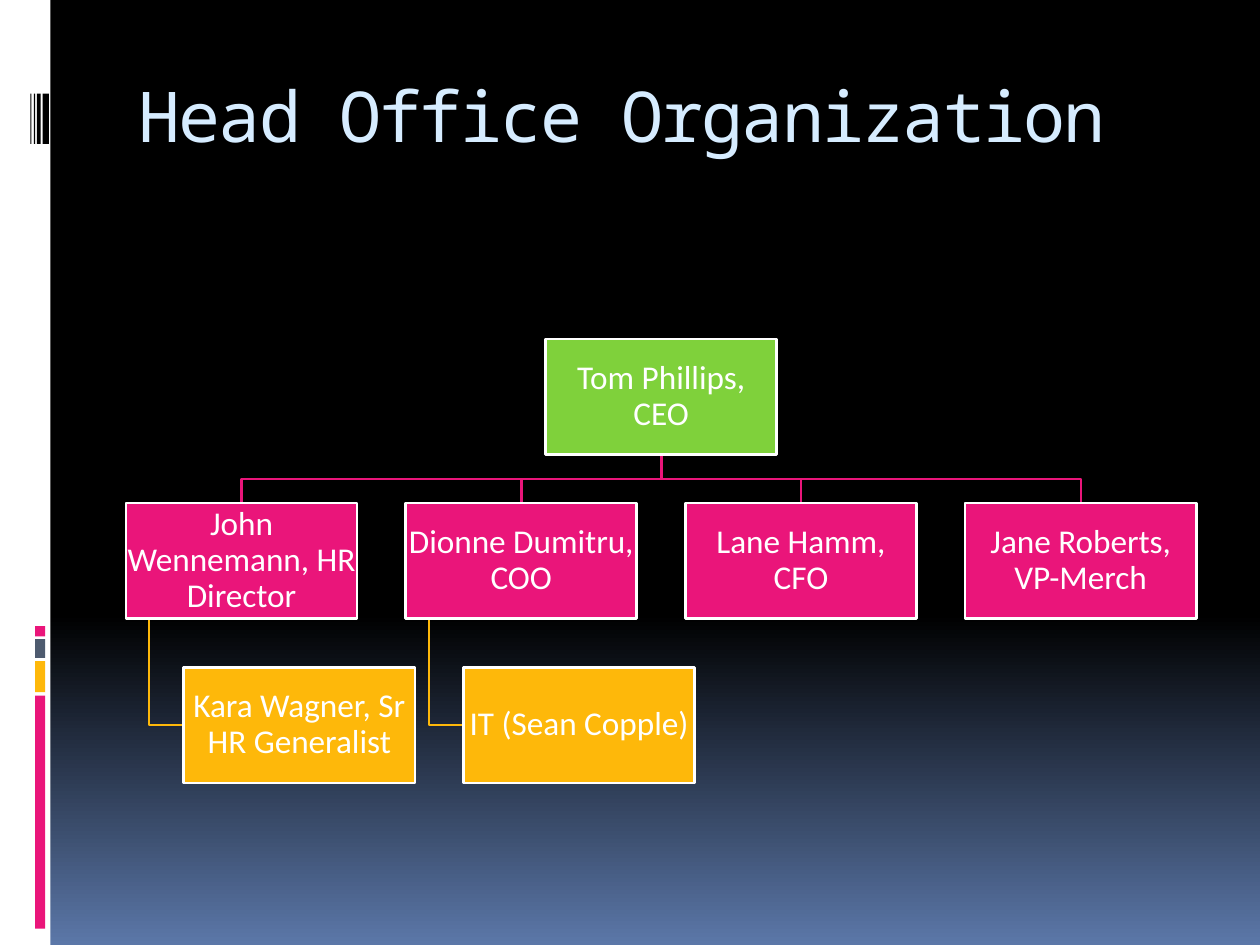
"""Build the Head Office Organization slide with its three-level chart."""
from dataclasses import dataclass
from typing import Any

from pptx import Presentation
from pptx.dml.color import RGBColor
from pptx.enum.shapes import MSO_SHAPE
from pptx.enum.text import MSO_ANCHOR, PP_ALIGN
from pptx.util import Pt


@dataclass(frozen=True)
class Theme:
    white: str = "FFFFFF"
    black: str = "000000"
    horizon: str = "5B77A8"
    sky: str = "D6ECFF"
    green: str = "7FD13B"
    pink: str = "EA157A"
    amber: str = "FEB80A"
    slate: str = "4E5B6F"
    title_font: str = "Noto Sans Mono"
    body_font: str = "Calibri"
    title_size: float = 40
    body_size: float = 19
    line_width: float = 1.5


@dataclass(frozen=True)
class Strip:
    left: float
    top: float
    width: float
    height: float
    color: str


@dataclass(frozen=True)
class Post:
    label: str
    column: float
    row: int
    color: str
    indent: float = 0

    @property
    def left(self) -> float:
        return CHART_LEFT + self.column * COLUMN_PITCH + self.indent

    @property
    def top(self) -> float:
        return CHART_TOP + self.row * ROW_PITCH

    @property
    def center(self) -> float:
        return self.left + POST_WIDTH / 2

    @property
    def bottom(self) -> float:
        return self.top + POST_HEIGHT


THEME = Theme()
SLIDE_WIDTH, SLIDE_HEIGHT = 720, 540
CHART_LEFT, CHART_TOP = 72, 193.75
POST_WIDTH, POST_HEIGHT = 132.1, 66.05
COLUMN_PITCH, ROW_PITCH = 159.85, 93.8
REPORT_INDENT, SPINE_INDENT = POST_WIDTH / 4, POST_WIDTH / 10

SIDEBAR = [
    Strip(0, 0, 28.8, SLIDE_HEIGHT, THEME.white),
    Strip(20, 397.5, 5.8, 133.2, THEME.pink),
    Strip(20, 377.8, 5.8, 17.8, THEME.amber),
    Strip(20, 365.2, 5.8, 10.8, THEME.slate),
    Strip(20, 357.8, 5.8, 5.8, THEME.pink),
    *(Strip(left, 53.5, width, 28.8, THEME.black)
      for left, width in [(24.4, 3.6), (21.1, 2.2), (19.4, 0.7), (17.3, 0.7)]),
]
CEO = Post("Tom Phillips, CEO", 1.5, 0, THEME.green)
DIRECTORS = [
    Post(label, column, 1, THEME.pink)
    for column, label in enumerate([
        "John Wennemann, HR Director",
        "Dionne Dumitru, COO",
        "Lane Hamm, CFO",
        "Jane Roberts, VP-Merch",
    ])
]
REPORTS = [
    Post(label, column, 2, THEME.amber, REPORT_INDENT)
    for column, label in enumerate(["Kara Wagner, Sr HR Generalist", "IT (Sean Copple)"])
]


def apply(target: Any, values: dict[str, Any]) -> None:
    """Set each named attribute on the target."""
    for name, value in values.items():
        setattr(target, name, value)


def paint_background(slide: Any) -> None:
    """Fade the slide from black down to the horizon colour."""
    backdrop = slide.background.fill
    backdrop.gradient()
    backdrop.gradient_angle = 270
    fade = [(0.65, THEME.black), (1, THEME.horizon)]
    for stop, (position, color) in zip(backdrop.gradient_stops, fade):
        stop.position = position
        stop.color.rgb = RGBColor.from_string(color)


def add_block(slide: Any, strip: Strip) -> Any:
    """Add a plain filled rectangle without an outline."""
    block = slide.shapes.add_shape(
        MSO_SHAPE.RECTANGLE, Pt(strip.left), Pt(strip.top), Pt(strip.width), Pt(strip.height))
    block.shadow.inherit = False
    block.fill.solid()
    block.fill.fore_color.rgb = RGBColor.from_string(strip.color)
    block.line.fill.background()
    return block


def set_line(shape: Any, color: str) -> None:
    """Outline a shape in the chart's line width."""
    shape.line.color.rgb = RGBColor.from_string(color)
    shape.line.width = Pt(THEME.line_width)


def add_title(slide: Any, wording: str) -> None:
    """Add the slide heading."""
    heading = slide.shapes.add_textbox(Pt(72), Pt(40.3), Pt(612), Pt(72)).text_frame
    apply(heading, {"word_wrap": True, "vertical_anchor": MSO_ANCHOR.TOP, "margin_top": Pt(1)})
    words = heading.paragraphs[0].add_run()
    words.text = wording
    apply(words.font, {"name": THEME.title_font, "size": Pt(THEME.title_size)})
    words.font.color.rgb = RGBColor.from_string(THEME.sky)
    words.font._element.set("spc", "-100")


def add_branch(slide: Any, bends: list[tuple[float, float]], color: str) -> None:
    """Draw an open right-angled line through the bends."""
    start, *rest = [(Pt(x), Pt(y)) for x, y in bends]
    route = slide.shapes.build_freeform(*start)
    route.add_line_segments(rest, close=False)
    branch = route.convert_to_shape()
    branch.shadow.inherit = False
    branch.fill.background()
    set_line(branch, color)


def add_post(slide: Any, post: Post) -> None:
    """Draw one labelled box of the chart."""
    box = add_block(slide, Strip(post.left, post.top, POST_WIDTH, POST_HEIGHT, post.color))
    set_line(box, THEME.white)
    margins = {f"margin_{side}": Pt(0.9) for side in ("left", "top", "right", "bottom")}
    apply(box.text_frame, {"word_wrap": True, "vertical_anchor": MSO_ANCHOR.MIDDLE, **margins})
    label = box.text_frame.paragraphs[0]
    apply(label, {"text": post.label, "alignment": PP_ALIGN.CENTER, "line_spacing": 0.9})
    words = label.runs[0].font
    apply(words, {"name": THEME.body_font, "size": Pt(THEME.body_size)})
    words.color.rgb = RGBColor.from_string(THEME.white)


def main() -> None:
    """Assemble and save the slide."""
    deck = Presentation()
    apply(deck, {"slide_width": Pt(SLIDE_WIDTH), "slide_height": Pt(SLIDE_HEIGHT)})
    slide = deck.slides.add_slide(deck.slide_layouts[6])
    paint_background(slide)
    for strip in SIDEBAR:
        add_block(slide, strip)
    add_title(slide, "Head Office Organization")
    for director in DIRECTORS:
        rail = (CEO.bottom + director.top) / 2
        add_branch(slide, [(CEO.center, CEO.bottom), (CEO.center, rail),
                           (director.center, rail), (director.center, director.top)], THEME.pink)
    for director, report in zip(DIRECTORS, REPORTS):
        spine = director.left + SPINE_INDENT
        middle = report.top + POST_HEIGHT / 2
        add_branch(slide, [(spine, director.bottom), (spine, middle),
                           (report.left, middle)], THEME.amber)
    for post in [CEO, *DIRECTORS, *REPORTS]:
        add_post(slide, post)
    deck.save("out.pptx")


if __name__ == "__main__":
    main()
